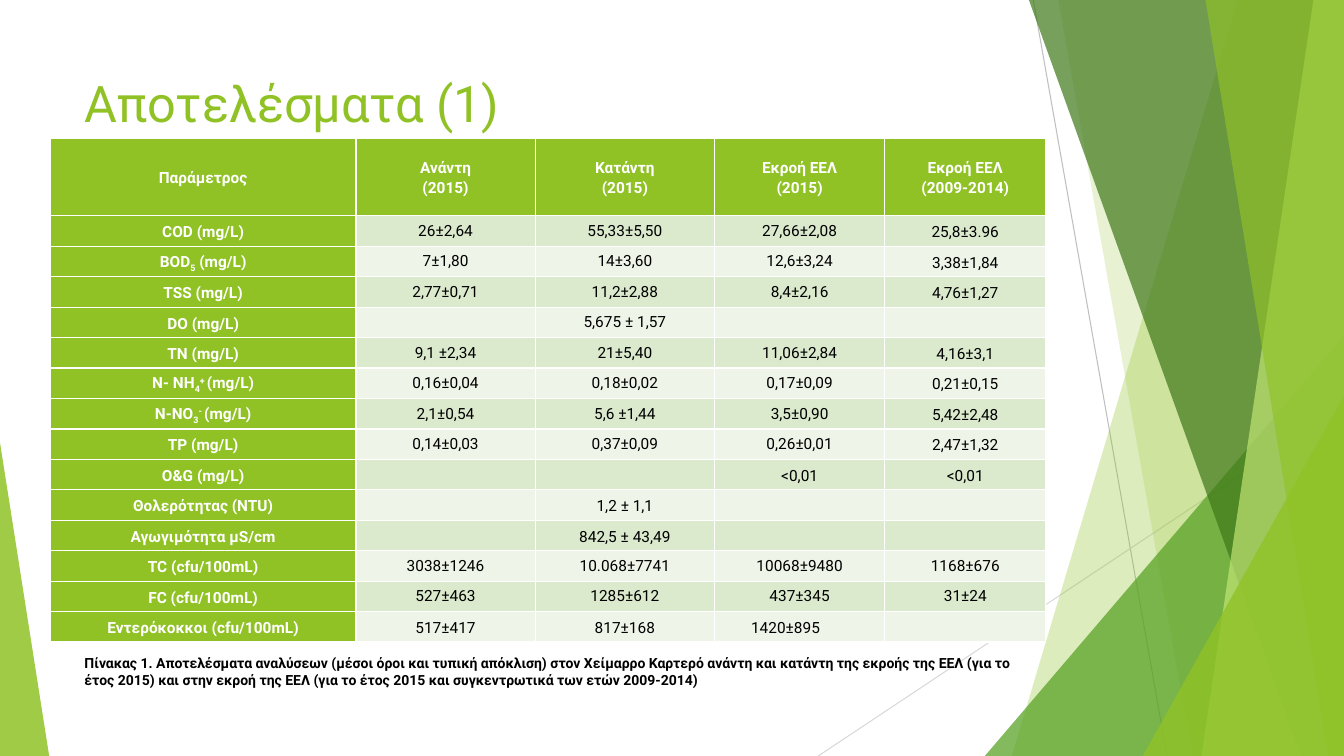
from lxml import etree
from pptx import Presentation
from pptx.dml.color import RGBColor
from pptx.enum import shapes, text
from pptx.oxml import ns
from pptx.util import Cm, Pt

COLORS = {
    "lime": "90C226", "green": "54A021", "forest": "3F7819", "pale": "C0E474",
    "band": "DBE9CD", "light": "EEF4E8", "white": "FFFFFF", "black": "000000",
    "gray": "BFBFBF", "silver": "D9D9D9",
}
FONT = "Roboto"
SUB, SUP = -25000, 30000
COLUMN_WIDTHS = [7.7, 4.52, 4.52, 4.29, 4.06]
HEADER_HEIGHT = 1.96
ROWS = [
    ["Παράμετρος", "Ανάντη\n(2015)", "Κατάντη\n(2015)", "Εκροή ΕΕΛ\n(2015)", "Εκροή ΕΕΛ\n(2009-2014)"],
    ["COD (mg/L)", "26±2,64", "55,33±5,50", "27,66±2,08", "25,8±3.96"],
    [[("BOD", 0), ("5", SUB), (" (mg/L)", 0)], "7±1,80", "14±3,60", "12,6±3,24", "3,38±1,84"],
    ["TSS (mg/L)", "2,77±0,71", "11,2±2,88", "8,4±2,16", "4,76±1,27"],
    ["DO (mg/L)", "", "5,675 ± 1,57", "", ""],
    ["ΤΝ (mg/L)", "9,1 ±2,34", "21±5,40", "11,06±2,84", "4,16±3,1"],
    [[("Ν- ΝH", 0), ("4", SUB), ("+ ", SUP), ("(mg/L)", 0)], "0,16±0,04", "0,18±0,02", "0,17±0,09", "0,21±0,15"],
    [[("Ν-ΝΟ", 0), ("3", SUB), ("- ", SUP), ("(mg/L)", 0)], "2,1±0,54", "5,6 ±1,44", "3,5±0,90", "5,42±2,48"],
    ["ΤΡ (mg/L)", "0,14±0,03", "0,37±0,09", "0,26±0,01", "2,47±1,32"],
    ["O&G (mg/L)", "", "", "<0,01", "<0,01"],
    ["Θολερότητας (NTU)", "", "1,2 ± 1,1", "", ""],
    ["Αγωγιμότητα μS/cm", "", "842,5 ± 43,49", "", ""],
    ["TC (cfu/100mL)", "3038±1246", "10.068±7741", "10068±9480", "1168±676"],
    ["FC (cfu/100mL)", "527±463", "1285±612", "437±345", "31±24"],
    ["Εντερόκοκκοι (cfu/100mL)", "517±417", "817±168", "1420±895", ""],
]
CAPTION = ("Πίνακας 1. Αποτελέσματα αναλύσεων (μέσοι όροι και τυπική απόκλιση) στον Χείμαρρο Καρτερό "
           "ανάντη και κατάντη της εκροής της ΕΕΛ (για το έτος 2015) και στην εκροή της ΕΕΛ "
           "(για το έτος 2015 και συγκεντρωτικά των ετών 2009-2014)")


def rgb(color):
    return RGBColor.from_string(COLORS[color])


def style(p, size, color, bold=False):
    p.font.name = FONT
    p.font.size = Pt(size)
    p.font.bold = bold
    p.font.color.rgb = rgb(color)


def paint(sp, color, opacity):
    sp.shadow.inherit = False
    sp.line.fill.background()
    sp.fill.solid()
    sp.fill.fore_color.rgb = rgb(color)
    fill = sp._element.spPr.find(ns.qn("a:solidFill"))
    etree.SubElement(fill[0], ns.qn("a:alpha")).set("val", str(opacity * 1000))


def add_line(s, x1, y1, x2, y2, color):
    line = s.shapes.add_connector(shapes.MSO_CONNECTOR.STRAIGHT, Cm(x1), Cm(y1), Cm(x2), Cm(y2))
    line.line.color.rgb = rgb(color)
    line.line.width = Pt(0.75)
    etree.SubElement(line._element.spPr, ns.qn("a:effectLst"))


def add_triangle(s, x, y, w, h, apex, color, opacity):
    sp = s.shapes.add_shape(shapes.MSO_SHAPE.ISOSCELES_TRIANGLE, Cm(x), Cm(y), Cm(w), Cm(h))
    sp.adjustments[0] = apex
    paint(sp, color, opacity)


def add_slab(s, x, y, w, h, top, bottom, color, opacity):
    builder = s.shapes.build_freeform(Cm(x + top), Cm(y))
    builder.add_line_segments([(Cm(x + w), Cm(y)), (Cm(x + w), Cm(y + h)), (Cm(x + bottom), Cm(y + h))])
    paint(builder.convert_to_shape(), color, opacity)


def add_right_wing(s, x, y, w, h):
    add_line(s, x + 5.42, y, x + 8.79, y + h, "gray")
    add_line(s, x + w, y + 10.24, x, y + h, "silver")
    add_slab(s, x, y, w, h, 10.57, 4.88, "lime", 30)
    add_slab(s, x, y, w, h, 6.05, 9.43, "lime", 20)
    add_triangle(s, x + 4.2, y + 8.46, w - 4.2, h - 8.46, 1, "green", 72)
    add_slab(s, x, y, w, h, 5.31, 12.17, "forest", 70)
    add_slab(s, x, y, w, h, 12.48, 9.66, "pale", 70)
    add_slab(s, x, y, w, h, 9.76, 12.86, "lime", 65)
    add_triangle(s, x + 8.18, y + 9.98, w - 8.18, h - 9.98, 1, "lime", 80)


def add_title(s, x, y, w, h):
    sp = s.shapes.title
    sp.left, sp.top, sp.width, sp.height = Cm(x), Cm(y), Cm(w), Cm(h)
    tf = sp.text_frame
    tf.text = "Αποτελέσματα (1)"
    tf.vertical_anchor = text.MSO_ANCHOR.TOP
    p = tf.paragraphs[0]
    p.alignment = text.PP_ALIGN.LEFT
    style(p, 36, "lime")


def fill_cell(cell, content, row, col):
    heading = row == 0 or col == 0
    tight = col > 0 and (row in (12, 13) or 0 < row < 9 and col < 4)
    cell.fill.solid()
    cell.fill.fore_color.rgb = rgb("lime" if heading else "band" if row % 2 else "light")
    cell.vertical_anchor = text.MSO_ANCHOR.MIDDLE
    cell.margin_left = cell.margin_right = Cm(0.18)
    cell.margin_top = cell.margin_bottom = 0
    tf = cell.text_frame
    if isinstance(content, str):
        tf.text = content
    else:
        for part, baseline in content:
            r = tf.paragraphs[0].add_run()
            r.text = part
            if baseline:
                r._r.get_or_add_rPr().set("baseline", str(baseline))
    for p in tf.paragraphs:
        p.alignment = text.PP_ALIGN.CENTER
        p.line_spacing = 1.0 if tight else 1.15
        style(p, 11, "white" if heading else "black", heading)


def add_results_table(s, x, y, w, h):
    table = s.shapes.add_table(len(ROWS), len(COLUMN_WIDTHS), Cm(x), Cm(y), Cm(w), Cm(h)).table
    for column, width in zip(table.columns, COLUMN_WIDTHS):
        column.width = Cm(width)
    for i, values in enumerate(ROWS):
        table.rows[i].height = Cm((h - HEADER_HEIGHT) / (len(ROWS) - 1) if i else HEADER_HEIGHT)
        for j, content in enumerate(values):
            fill_cell(table.cell(i, j), content, i, j)
    table.cell(0, 3).text_frame.paragraphs[1]._p.get_or_add_pPr().set("indent", str(Cm(-0.71)))
    table.cell(len(ROWS) - 1, 3).margin_right = Cm(0.89)


def add_caption(s, x, y, w, h):
    tf = s.shapes.add_textbox(Cm(x), Cm(y), Cm(w), Cm(h)).text_frame
    tf.word_wrap = True
    tf.text = CAPTION
    style(tf.paragraphs[0], 10, "black", True)


def main():
    prs = Presentation()
    prs.slide_width, prs.slide_height = Cm(33.87), Cm(19.05)
    s = prs.slides.add_slide(prs.slide_layouts[5])
    add_right_wing(s, 20.62, 0, 13.25, 19.05)
    add_triangle(s, 0, 11.15, 1.24, 7.9, 0, "lime", 85)
    add_title(s, 1.88, 1.7, 23.88, 3.66)
    add_results_table(s, 1.27, 3.48, sum(COLUMN_WIDTHS), 12.7)
    add_caption(s, 1.88, 16.36, 23.88, 1.12)
    prs.save("out.pptx")


if __name__ == "__main__":
    main()
